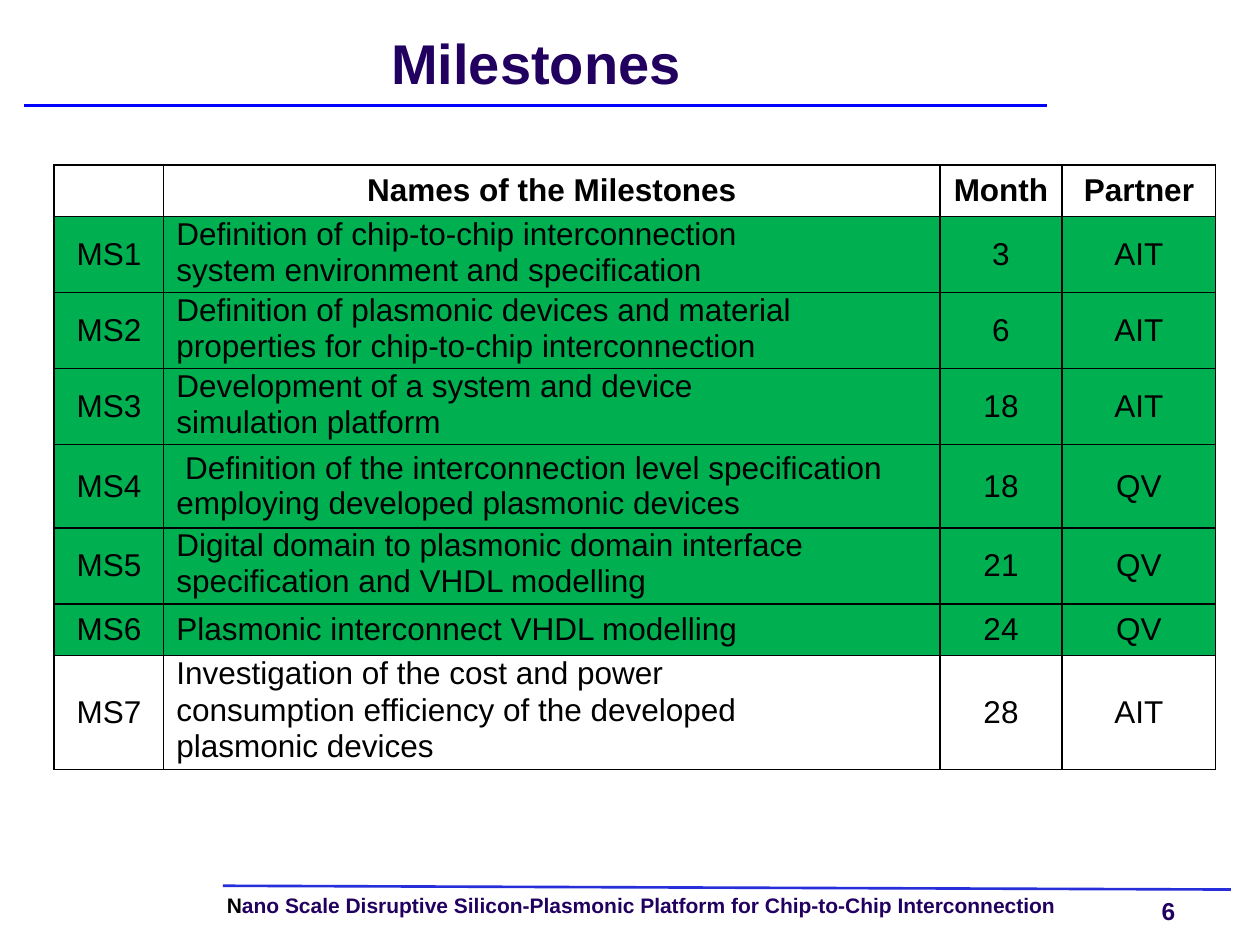
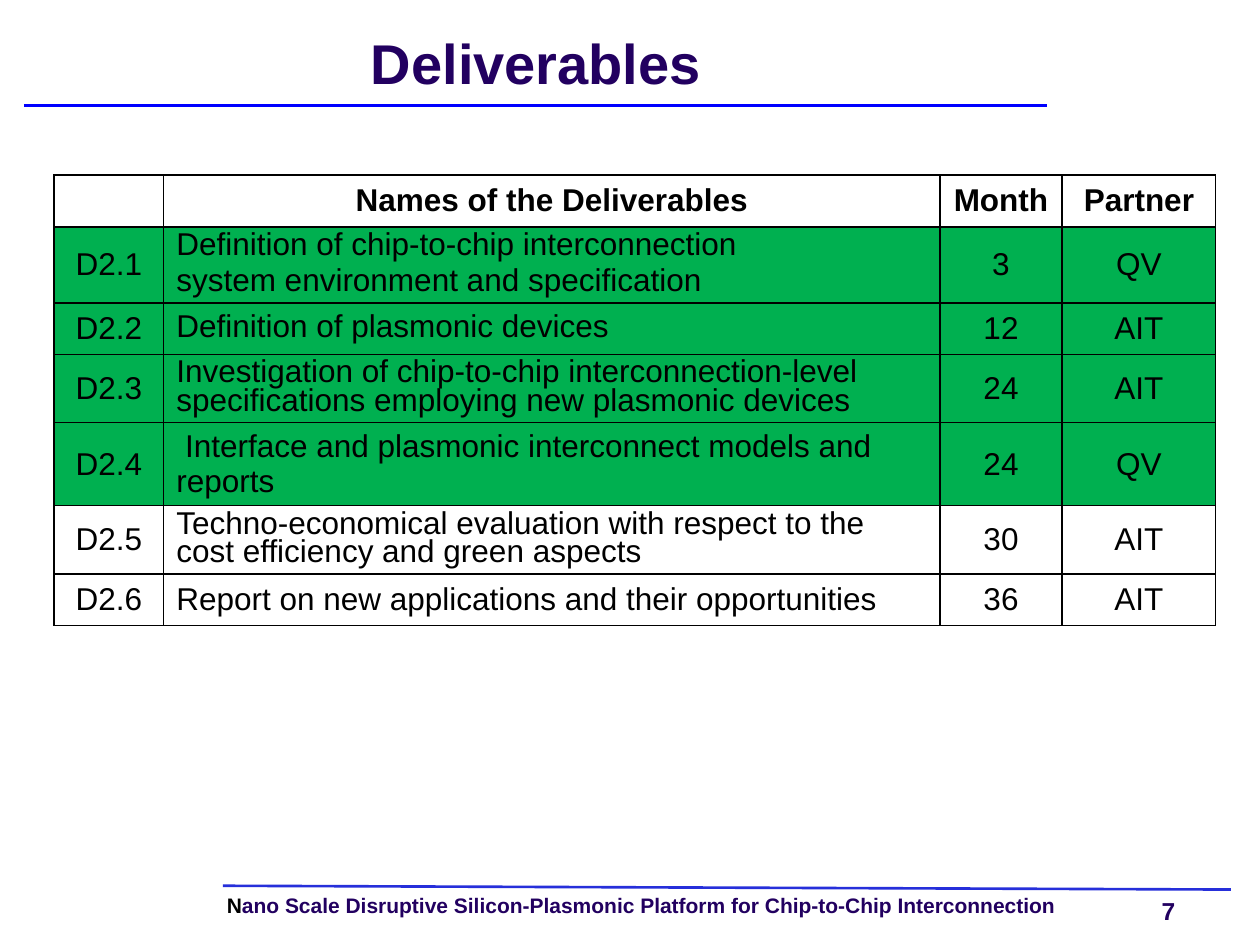
from dataclasses import dataclass

from lxml.etree import SubElement
from pptx import Presentation
from pptx.dml.color import RGBColor
from pptx.enum.shapes import MSO_CONNECTOR
from pptx.enum.text import MSO_ANCHOR, PP_ALIGN
from pptx.oxml.ns import qn
from pptx.util import Inches, Pt

FONT = "Arial"
BLACK = RGBColor(0x00, 0x00, 0x00)
INDIGO = RGBColor(0x22, 0x00, 0x60)
TITLE_BLUE = RGBColor(0x00, 0x00, 0xFF)
FOOTER_BLUE = RGBColor(0x26, 0x2F, 0xDA)
DONE_GREEN = RGBColor(0x00, 0xB0, 0x50)

COLUMN_WIDTHS = (0.87, 6.16, 0.97, 1.22)
ROW_HEIGHT = 0.41
CELL_MARGIN = 0.03
TIGHT = 0.8


@dataclass
class Entry:
    code: str
    name: str
    month: int
    partner: str
    done: bool = True
    tight: bool = True


MILESTONES = [
    Entry("MS1", "Definition of chip-to-chip interconnection\n"
          "system environment and specification", 3, "AIT"),
    Entry("MS2", "Definition of plasmonic devices and material\n"
          "properties for chip-to-chip interconnection", 6, "AIT"),
    Entry("MS3", "Development of a system and device\nsimulation platform", 18, "AIT"),
    Entry("MS4", " Definition of the interconnection level specification "
          "employing developed plasmonic devices", 18, "QV", tight=False),
    Entry("MS5", "Digital domain to plasmonic domain interface\n"
          "specification and VHDL modelling", 21, "QV"),
    Entry("MS6", "Plasmonic interconnect VHDL modelling", 24, "QV", tight=False),
    Entry("MS7", "Investigation of the cost and power\n"
          "consumption efficiency of the developed\nplasmonic devices", 28, "AIT", done=False),
]

DELIVERABLES = [
    Entry("D2.1", "Definition of chip-to-chip interconnection\n"
          "system environment and specification", 3, "QV"),
    Entry("D2.2", "Definition of plasmonic devices", 12, "AIT"),
    Entry("D2.3", "Investigation of chip-to-chip interconnection-level "
          "specifications employing new plasmonic devices", 24, "AIT"),
    Entry("D2.4", " Interface and plasmonic interconnect models and reports",
          24, "QV", tight=False),
    Entry("D2.5", "Techno-economical evaluation with respect to the "
          "cost efficiency and green aspects", 30, "AIT", done=False),
    Entry("D2.6", "Report on new applications and their opportunities",
          36, "AIT", done=False, tight=False),
]


def add_run(paragraph, text, size, color=BLACK, bold=True):
    run = paragraph.add_run()
    run.text = text
    run.font.name = FONT
    run.font.size = Pt(size)
    run.font.bold = bold
    run.font.color.rgb = color


def add_text_box(slide, left, top, width, height, wrap=True):
    """Add a text box without margins; return its frame and first paragraph."""
    frame = slide.shapes.add_textbox(
        Inches(left), Inches(top), Inches(width), Inches(height)).text_frame
    frame.word_wrap = wrap
    frame.margin_left = frame.margin_right = frame.margin_top = frame.margin_bottom = 0
    return frame, frame.paragraphs[0]


def add_rule(slide, start, end, color):
    rule = slide.shapes.add_connector(
        MSO_CONNECTOR.STRAIGHT, *(Inches(value) for value in (*start, *end)))
    rule.line.color.rgb = color
    rule.line.width = Pt(1.5)
    SubElement(rule._element.spPr, qn("a:effectLst"))


def add_title(slide, title):
    add_rule(slide, (0.19, 0.84), (8.31, 0.84), TITLE_BLUE)
    frame, paragraph = add_text_box(slide, 0.2, 0.2, 8.11, 0.67)
    frame.vertical_anchor = MSO_ANCHOR.MIDDLE
    paragraph.alignment = PP_ALIGN.CENTER
    paragraph.line_spacing = Pt(32)
    add_run(paragraph, title, 32, INDIGO)


def add_footer(slide, number):
    add_rule(slide, (1.77, 7.03), (9.77, 7.06), FOOTER_BLUE)
    _, paragraph = add_text_box(slide, 1.8, 7.11, 7.14, 0.18)
    paragraph.line_spacing = 0.9
    add_run(paragraph, "N", 12)
    add_run(paragraph, "ano Scale Disruptive Silicon-Plasmonic Platform "
            "for Chip-to-Chip Interconnection", 12, INDIGO)
    _, paragraph = add_text_box(slide, 9.22, 7.11, 0.24, 0.23, wrap=False)
    add_run(paragraph, str(number), 14, INDIGO)


def add_borders(cell):
    properties = cell._tc.get_or_add_tcPr()
    for side in ("a:lnL", "a:lnR", "a:lnT", "a:lnB"):
        line = SubElement(properties, qn(side), w=str(Pt(1)))
        fill = SubElement(line, qn("a:solidFill"))
        SubElement(fill, qn("a:srgbClr"), val=str(BLACK))


def fill_cell(cell, text, bold=False, centred=True, tight=False, done=False):
    add_borders(cell)
    cell.vertical_anchor = MSO_ANCHOR.MIDDLE
    cell.margin_top = cell.margin_bottom = Inches(CELL_MARGIN)
    if done:
        cell.fill.solid()
        cell.fill.fore_color.rgb = DONE_GREEN
    else:
        cell.fill.background()
    if not text:
        return
    frame = cell.text_frame
    for index, line in enumerate(text.split("\n")):
        paragraph = frame.add_paragraph() if index else frame.paragraphs[0]
        paragraph.alignment = PP_ALIGN.CENTER if centred else PP_ALIGN.LEFT
        if tight:
            paragraph.line_spacing = TIGHT
            if index:
                paragraph.space_before = Pt(4.5)
        add_run(paragraph, line, 18, bold=bold)


def add_schedule(slide, top, kind, entries):
    """Add the table of entries; rows for finished entries are green."""
    row_count = len(entries) + 1
    table = slide.shapes.add_table(
        row_count, len(COLUMN_WIDTHS), Inches(0.43), Inches(top),
        Inches(sum(COLUMN_WIDTHS)), Inches(ROW_HEIGHT * row_count)).table
    table.first_row = table.horz_banding = False
    for column, width in zip(table.columns, COLUMN_WIDTHS):
        column.width = Inches(width)
    headings = ("", f"Names of the {kind}", "Month", "Partner")
    for column, heading in enumerate(headings):
        fill_cell(table.cell(0, column), heading, bold=True)
    for row, entry in enumerate(entries, start=1):
        values = (entry.code, entry.name, str(entry.month), entry.partner)
        for column, value in enumerate(values):
            is_name = column == 1
            fill_cell(table.cell(row, column), value, centred=not is_name,
                      tight=is_name and entry.tight, done=entry.done)


def add_schedule_slide(presentation, number, title, top, entries):
    slide = presentation.slides.add_slide(presentation.slide_layouts[6])
    add_footer(slide, number)
    add_title(slide, title)
    add_schedule(slide, top, title, entries)


def main():
    presentation = Presentation()
    presentation.slide_width = Inches(10)
    presentation.slide_height = Inches(7.5)
    add_schedule_slide(presentation, 6, "Milestones", 1.31, MILESTONES)
    add_schedule_slide(presentation, 7, "Deliverables", 1.39, DELIVERABLES)
    presentation.save("out.pptx")


if __name__ == "__main__":
    main()
